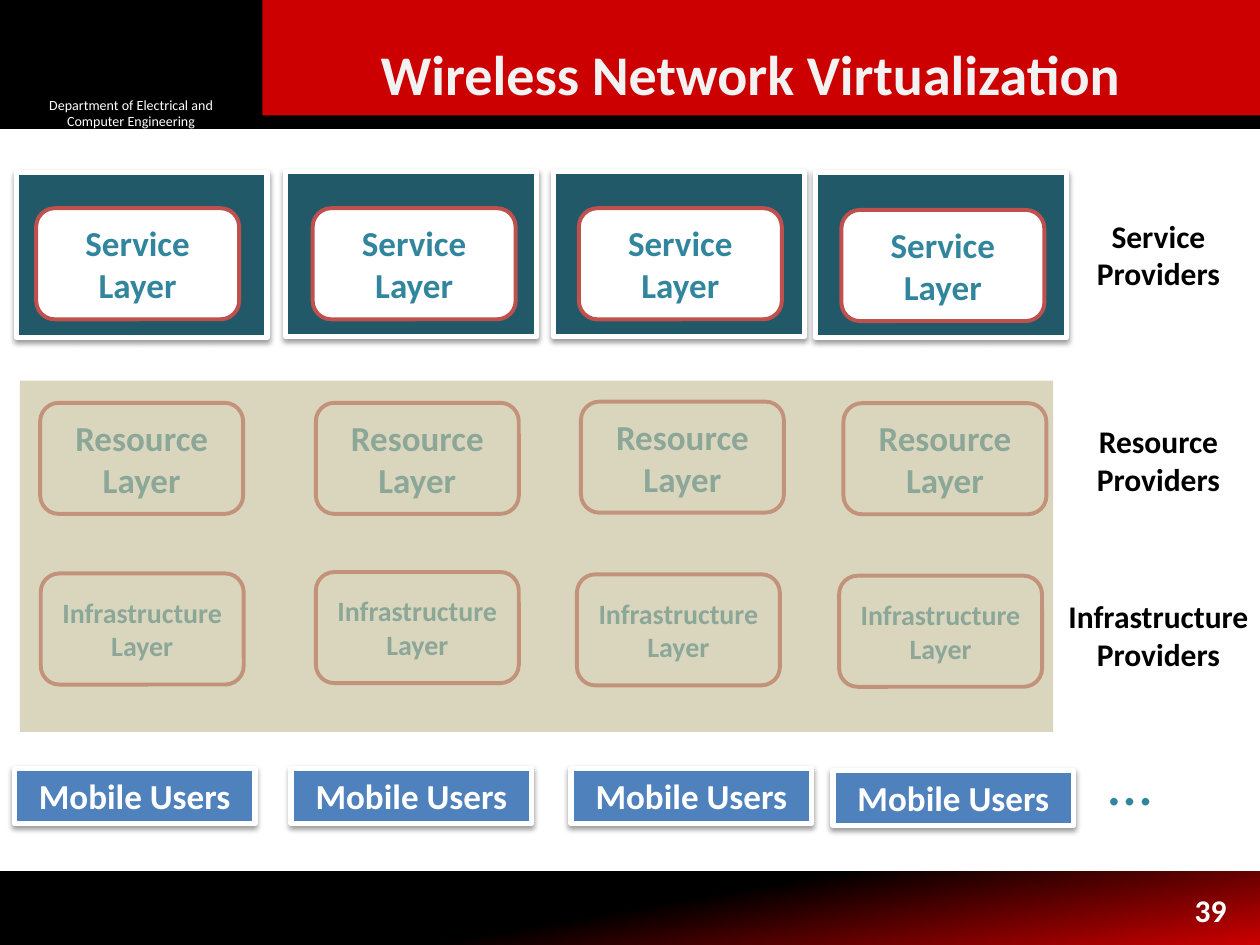
"""Build the Wireless Network Virtualization slide."""
from dataclasses import dataclass
from typing import Optional

from lxml import etree
from pptx import Presentation
from pptx.dml.color import RGBColor
from pptx.enum.shapes import MSO_SHAPE
from pptx.enum.text import MSO_ANCHOR, MSO_AUTO_SIZE, PP_ALIGN
from pptx.oxml.ns import qn
from pptx.util import Pt

RECT, ROUNDED = MSO_SHAPE.RECTANGLE, MSO_SHAPE.ROUNDED_RECTANGLE
TOP, MIDDLE = MSO_ANCHOR.TOP, MSO_ANCHOR.MIDDLE
LEFT, CENTER, RIGHT = PP_ALIGN.LEFT, PP_ALIGN.CENTER, PP_ALIGN.RIGHT
NO_AUTOFIT = MSO_AUTO_SIZE.NONE
BLACK, WHITE, RED, TEAL = "000000", "FFFFFF", "CC0000", "31859C"


@dataclass(frozen=True)
class Box:
    left: float
    top: float
    width: float
    height: float

    def lengths(self) -> list:
        return [Pt(v) for v in (self.left, self.top, self.width, self.height)]


@dataclass(frozen=True)
class Lettering:
    size: float
    color: str
    bold: bool = True
    align: int = CENTER
    anchor: int = TOP
    wrap: bool = True


@dataclass(frozen=True)
class Look:
    fill: str
    line: Optional[str] = None
    line_width: float = 0
    preset: int = RECT
    shadow: bool = False


@dataclass(frozen=True)
class Row:
    places: tuple
    width: float
    height: float
    look: Look
    text: str = ""
    lettering: Optional[Lettering] = None


def rgb(color: str) -> RGBColor:
    """Turn a hex string into a colour."""
    return RGBColor.from_string(color)


def write(shape, text: str, lettering: Lettering) -> None:
    """Put formatted text into a shape."""
    frame = shape.text_frame
    frame.text = text
    paragraph = frame.paragraphs[0]
    font = paragraph.runs[0].font
    formats = {
        frame: {"word_wrap": lettering.wrap, "vertical_anchor": lettering.anchor,
                "auto_size": NO_AUTOFIT},
        paragraph: {"alignment": lettering.align},
        font: {"name": "Calibri", "size": Pt(lettering.size), "bold": lettering.bold},
    }
    for target, values in formats.items():
        for name, value in values.items():
            setattr(target, name, value)
    font.color.rgb = rgb(lettering.color)


def add_text(slide, box: Box, text: str, lettering: Lettering) -> None:
    """Add a free-standing text box."""
    write(slide.shapes.add_textbox(*box.lengths()), text, lettering)


def add_block(slide, box: Box, look: Look):
    """Add a filled preset shape with optional outline and soft shadow."""
    block = slide.shapes.add_shape(look.preset, *box.lengths())
    block.shadow.inherit = False
    block.fill.solid()
    block.fill.fore_color.rgb = rgb(look.fill)
    if look.line:
        block.line.color.rgb = rgb(look.line)
        block.line.width = Pt(look.line_width)
    else:
        block.line.fill.background()
    if look.shadow:
        effects = block._element.spPr.find(qn("a:effectLst"))
        outer = etree.SubElement(effects, qn("a:outerShdw"), blurRad=str(Pt(3.1)),
                                 dist=str(Pt(1.6)), dir="5400000", rotWithShape="0")
        shade = etree.SubElement(outer, qn("a:srgbClr"), val=BLACK)
        etree.SubElement(shade, qn("a:alpha"), val="38000")
    return block


def add_row(slide, row: Row) -> None:
    """Add one row of equal blocks."""
    for left, top in row.places:
        block = add_block(slide, Box(left, top, row.width, row.height), row.look)
        if row.lettering:
            write(block, row.text, row.lettering)


CARD = Look(WHITE, "C0504D", 2.25, ROUNDED)
CARD_TEXT = Lettering(20, TEAL, anchor=MIDDLE)
SMALL_CARD_TEXT = Lettering(16, TEAL, anchor=MIDDLE)
CARD_SIZE = (116, 63.5)
ROWS = (
    Row(((9.3, 98.5), (163.2, 97.9), (316.3, 97.9), (466, 98.5)), 143.3, 94.3,
        Look("215968", WHITE, 3, shadow=True)),
    Row(((20.7, 119), (178.7, 119), (330.8, 119), (480.8, 120)), *CARD_SIZE,
        CARD, "Service Layer", CARD_TEXT),
    Row(((23, 230.2), (180.5, 230.2), (332, 229.5), (482, 230.4)), *CARD_SIZE,
        CARD, "Resource Layer", CARD_TEXT),
    Row(((23.3, 327.7), (180.5, 326.9), (329.7, 328.2), (479.5, 329)), *CARD_SIZE,
        CARD, "Infrastructure Layer", SMALL_CARD_TEXT),
    Row(((8.2, 439.1), (166.3, 439.1), (326.3, 439.1), (476, 440.2)), 137.5, 31.5,
        Look("4F81BD", WHITE, 3, shadow=True), "Mobile Users", Lettering(20, WHITE)),
)
PROVIDERS = (("Service Providers", 120.2), ("Resource Providers", 237.6),
             ("Infrastructure Providers", 337.7))


def add_banners(slide) -> None:
    """Add the header and footer bands, the department and the title."""
    footer = add_block(slide, Box(0, 498, 720, 42), Look(BLACK))
    footer.fill.gradient()
    footer.fill.gradient_angle = 280
    for stop, position, color in zip(footer.fill.gradient_stops, (0.5, 1), (BLACK, RED)):
        stop.position = position
        stop.color.rgb = rgb(color)

    add_block(slide, Box(0, 0.7, 720, 72), Look(BLACK, BLACK, 2))
    department = add_block(slide, Box(12, 55.5, 126, 18), Look(BLACK))
    write(department, "Department of Electrical and Computer Engineering",
          Lettering(8, WHITE, bold=False, anchor=MIDDLE))
    add_block(slide, Box(150, 0, 570, 66), Look(RED))

    title = slide.shapes.title
    title.left, title.top, title.width, title.height = Box(120, 18, 618, 48).lengths()
    write(title, "Wireless Network Virtualization", Lettering(32, "F2F2F2", anchor=MIDDLE))
    slide.shapes._spTree.append(title._element)


def main() -> None:
    """Draw the slide and save it."""
    deck = Presentation()
    deck.slide_width, deck.slide_height = Pt(720), Pt(540)
    slide = deck.slides.add_slide(deck.slide_layouts[5])
    add_banners(slide)
    for row in ROWS:
        add_row(slide, row)

    veil = add_block(slide, Box(11.4, 217.6, 590.4, 200.7), Look("C4BD97"))
    veil_color = veil._element.spPr.find(qn("a:solidFill"))[0]
    etree.SubElement(veil_color, qn("a:alpha"), val="62000")

    for provider, top in PROVIDERS:
        add_text(slide, Box(594, top, 136, 51), provider, Lettering(18, BLACK))
    add_text(slide, Box(626.4, 420.5, 39.6, 51), "…",
             Lettering(36, TEAL, bold=False, align=LEFT, wrap=False))
    add_text(slide, Box(540, 505.5, 168, 28.8), "39", Lettering(18, WHITE, align=RIGHT))
    deck.save("out.pptx")


if __name__ == "__main__":
    main()
